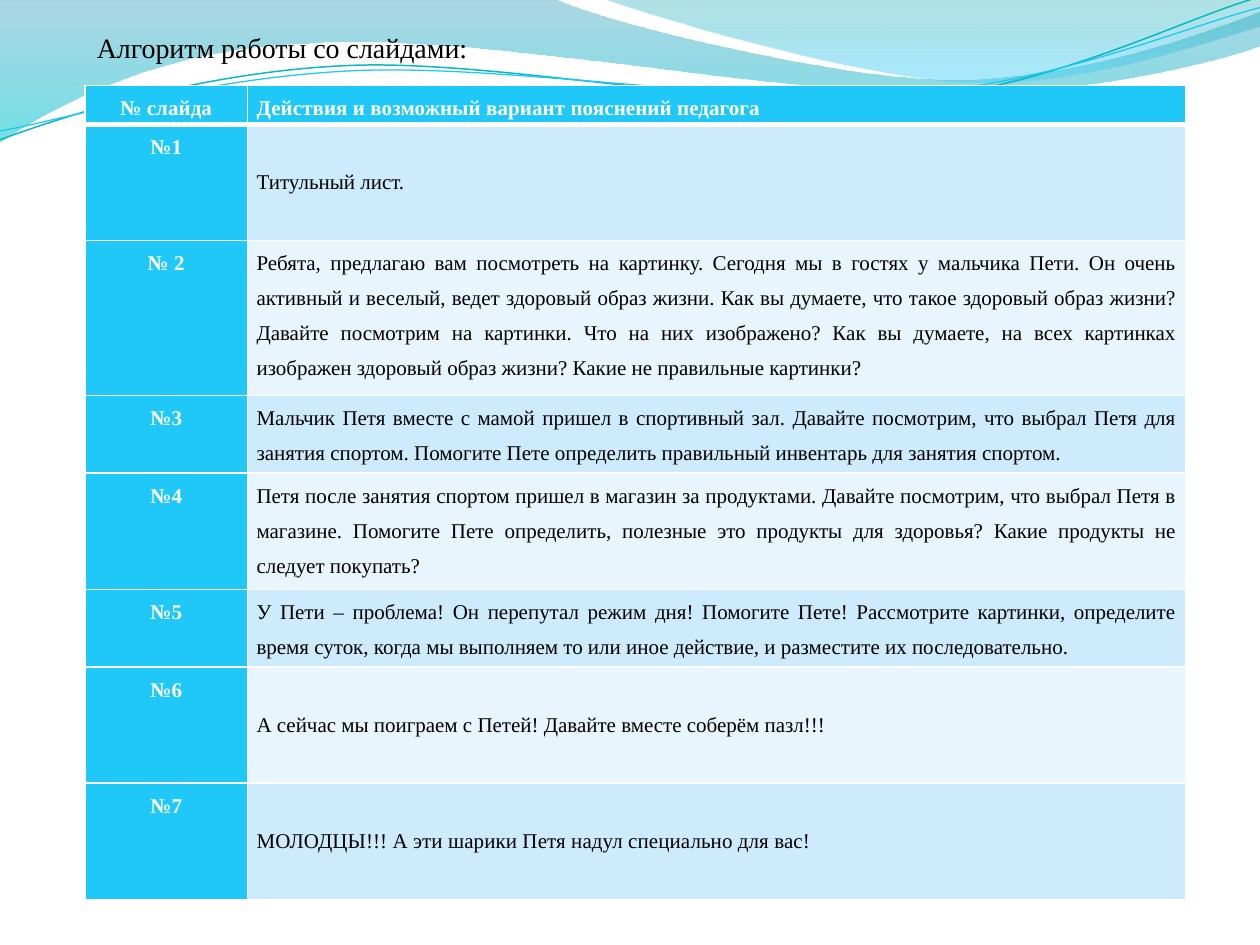
"""Build a slide with a lesson plan table under a wave banner."""
from lxml import etree
from pptx import Presentation
from pptx.dml.color import RGBColor
from pptx.enum import text as t
from pptx.oxml import ns
from pptx.util import Pt

FONT = "Times New Roman"
WHITE = RGBColor(0xFF, 0xFF, 0xFF)
BLACK = RGBColor(0, 0, 0)
SKY = RGBColor(0x20, 0xC8, 0xF7)
BANDS = (RGBColor(0xCD, 0xEB, 0xFC), RGBColor(0xE8, 0xF5, 0xFD))
STEEL = RGBColor(0x44, 0xA7, 0xC4)
AQUA = RGBColor(0x00, 0xC6, 0xCF)
TEAL = RGBColor(0x00, 0xA1, 0xA9)
AZURE = RGBColor(0x44, 0xCE, 0xF6)
SEA = RGBColor(0x0A, 0xB8, 0xBF)

LEFT, WIDE, LINE = 48.24, 629.28, 22.15
LEFT_AL, MID_AL, JUST_AL = t.PP_ALIGN.LEFT, t.PP_ALIGN.CENTER, t.PP_ALIGN.JUSTIFY

SWOOSH = [
    (0, 0), (316.8, -0.7),
    (342.7, 12.2, 478.1, 45.4, 545.8, 45.4),
    (614.2, 45.4, 689.8, 18.7, 720, 6.5), (720.7, 25.9),
    (707.8, 31.7, 626.4, 54.7, 537.1, 54),
    (447.8, 54, 275, 20.2, 185, 24.5),
    (92.9, 25.9, 33.1, 59.8, -0.7, 81.4), (0, 0),
]
CREST = [
    (344.9, -0.7),
    (366.5, 7.9, 491, 44.6, 553.7, 46.8),
    (616.3, 49.7, 691.9, 23, 720, 15.1), (720, 0), (344.9, -0.7),
]
WAVES = [
    (SEA, 0.85, [
        (-1.4, 62.9),
        (33.8, 51.7, 114.1, 29.4, 199.8, 29.9),
        (284.8, 30.3, 425.9, 67.3, 512.5, 64.8),
        (599.1, 62.4, 676.5, 25.7, 720.2, 15.6)]),
    (SKY, 0.75, [
        (-1.1, 57.9),
        (32.9, 53.7, 118.3, 32.5, 204.1, 33),
        (290.6, 33.4, 428.9, 63.8, 515.5, 61.4),
        (601.3, 59.6, 678.4, 30.1, 721.4, 21.3)]),
]

HEAD = ("№ слайда", "Действия и возможный вариант пояснений педагога")
STEPS = [
    ("№1", 3, "Титульный лист."),
    ("№ 2", 4, "Ребята, предлагаю вам посмотреть на картинку. Сегодня мы в гостях у мальчика Пети. "
     "Он очень активный и веселый, ведет здоровый образ жизни. Как вы думаете, что такое здоровый "
     "образ жизни? Давайте посмотрим на картинки. Что на них изображено? Как вы думаете, на всех "
     "картинках изображен здоровый образ жизни? Какие не правильные картинки?"),
    ("№3", 2, "Мальчик Петя вместе с мамой пришел в спортивный зал. Давайте посмотрим, что выбрал "
     "Петя для занятия спортом. Помогите Пете определить правильный инвентарь для занятия спортом."),
    ("№4", 3, "Петя после занятия спортом пришел в магазин за продуктами. Давайте посмотрим, что "
     "выбрал Петя в магазине. Помогите Пете определить, полезные это продукты для здоровья? "
     "Какие продукты не следует покупать?"),
    ("№5", 2, "У Пети – проблема! Он перепутал режим дня! Помогите Пете! Рассмотрите картинки, "
     "определите время суток, когда мы выполняем то или иное действие, и разместите их "
     "последовательно."),
    ("№6", 3, "А сейчас мы поиграем с Петей! Давайте вместе соберём пазл!!!"),
    ("№7", 3, "МОЛОДЦЫ!!! А эти шарики Петя надул специально для вас!"),
]
SPACED = (*HEAD, "№1", STEPS[1][0], *STEPS[-1][::2])


def outline(slide, legs, close):
    """Add a freeform whose six-number legs are cubic curves."""
    dots = [(Pt(leg[i]), Pt(leg[i + 1])) for leg in legs for i in range(0, len(leg), 2)]
    form = slide.shapes.build_freeform(*dots[0])
    form.add_line_segments(dots[1:], close=close)
    shape = form.convert_to_shape()
    shape.shadow.inherit = False
    lines = iter(list(shape._element.iter(ns.qn("a:lnTo"))))
    for leg in legs[1:]:
        first = next(lines)
        if len(leg) == 6:
            first.tag_name = None
            curve = etree.Element(ns.qn("a:cubicBezTo"))
            first.addprevious(curve)
            for line in (first, next(lines), next(lines)):
                curve.append(line[0])
                line.getparent().remove(line)
    return shape


def add_wash(slide, legs, stops):
    """Add a closed area with a see-through gradient from top to bottom."""
    shape = outline(slide, legs, True)
    shape.line.fill.background()
    shape.fill.gradient()
    shape.fill.gradient_angle = 270
    for stop, (place, color, alpha) in zip(shape.fill.gradient_stops, stops):
        stop.position = place
        stop.color.rgb = color
    marks = shape._element.spPr.iter(ns.qn("a:srgbClr"))
    for mark, (place, color, alpha) in zip(marks, stops):
        etree.SubElement(mark, ns.qn("a:alpha")).set("val", str(alpha * 1000))


def add_wave(slide, color, width, legs):
    """Add an open, slightly turned curve."""
    shape = outline(slide, legs, False)
    shape.fill.background()
    shape.line.color.rgb = color
    shape.line.width = Pt(width)
    shape.rotation = 357.3
    return shape


def style(para, size, color, align, bold=False):
    """Format a paragraph and its run."""
    para.alignment = align
    font = para.runs[0].font
    font.name, font.size, font.bold = FONT, Pt(size), bold
    font.color.rgb = color


def add_title(slide, words):
    """Add the heading text box."""
    box = slide.shapes.add_textbox(Pt(LEFT), Pt(13.7), Pt(WIDE), Pt(26.6))
    frame = box.text_frame
    frame.word_wrap = True
    frame.vertical_anchor = t.MSO_ANCHOR.MIDDLE
    frame.text = words
    style(frame.paragraphs[0], 16, BLACK, JUST_AL)


def rule_cell(cell, top, bottom):
    """Draw white borders, with the top and bottom widths given."""
    props = cell._tc.get_or_add_tcPr()
    for i, (side, width) in enumerate(zip("LRTB", (1, 1, top, bottom))):
        edge = etree.Element(ns.qn("a:ln" + side), w=str(Pt(width)))
        fill = etree.SubElement(edge, ns.qn("a:solidFill"))
        etree.SubElement(fill, ns.qn("a:srgbClr"), val=str(WHITE))
        props.insert(i, edge)


def fill_cell(cell, words, back, align, bold, drop=0):
    """Set the text, fill and margins of one cell."""
    cell.fill.solid()
    cell.fill.fore_color.rgb = back
    cell.margin_left = cell.margin_right = Pt(5.14)
    cell.margin_top, cell.margin_bottom = Pt(drop), 0
    cell.text = words
    para = cell.text_frame.paragraphs[0]
    para.line_spacing = 1.5
    style(para, 12, WHITE if bold else BLACK, align, bold)
    if words in SPACED:
        para.runs[0].font._element.set("spc", "5")


def add_plan(slide):
    """Add the table of slides and teacher remarks."""
    high = LINE * (1 + sum(step[1] for step in STEPS))
    table = slide.shapes.add_table(
        len(STEPS) + 1, 2, Pt(48.5), Pt(48.9), Pt(WIDE), Pt(high)).table
    for col, width in zip(table.columns, (93, 536.28)):
        col.width = Pt(width)
    table.rows[0].height = Pt(LINE)
    for i, (words, align) in enumerate(zip(HEAD, (MID_AL, LEFT_AL))):
        fill_cell(table.cell(0, i), words, SKY, align, True)
        rule_cell(table.cell(0, i), 1, 3)
    for i, (mark, lines, words) in enumerate(STEPS):
        table.rows[i + 1].height = Pt(LINE * lines)
        fill_cell(table.cell(i + 1, 0), mark, SKY, MID_AL, True)
        short = len(words) < 80
        fill_cell(table.cell(i + 1, 1), words, BANDS[i % 2],
                  LEFT_AL if short else JUST_AL, False, 20 if short else 0)
        for j in range(2):
            rule_cell(table.cell(i + 1, j), 1 if i else 3, 1)


def main():
    """Build and save the slide."""
    deck = Presentation()
    deck.slide_width, deck.slide_height = Pt(720), Pt(540)
    slide = deck.slides.add_slide(deck.slide_layouts[6])
    add_wash(slide, SWOOSH, [(0, STEEL, 45), (1, AQUA, 55)])
    add_wash(slide, CREST, [(0, TEAL, 30), (0.8, AZURE, 45)])
    slide.shapes.add_group_shape([add_wave(slide, *wave) for wave in WAVES])
    add_plan(slide)
    add_title(slide, "Алгоритм работы со слайдами:")
    deck.save("out.pptx")


if __name__ == "__main__":
    main()
